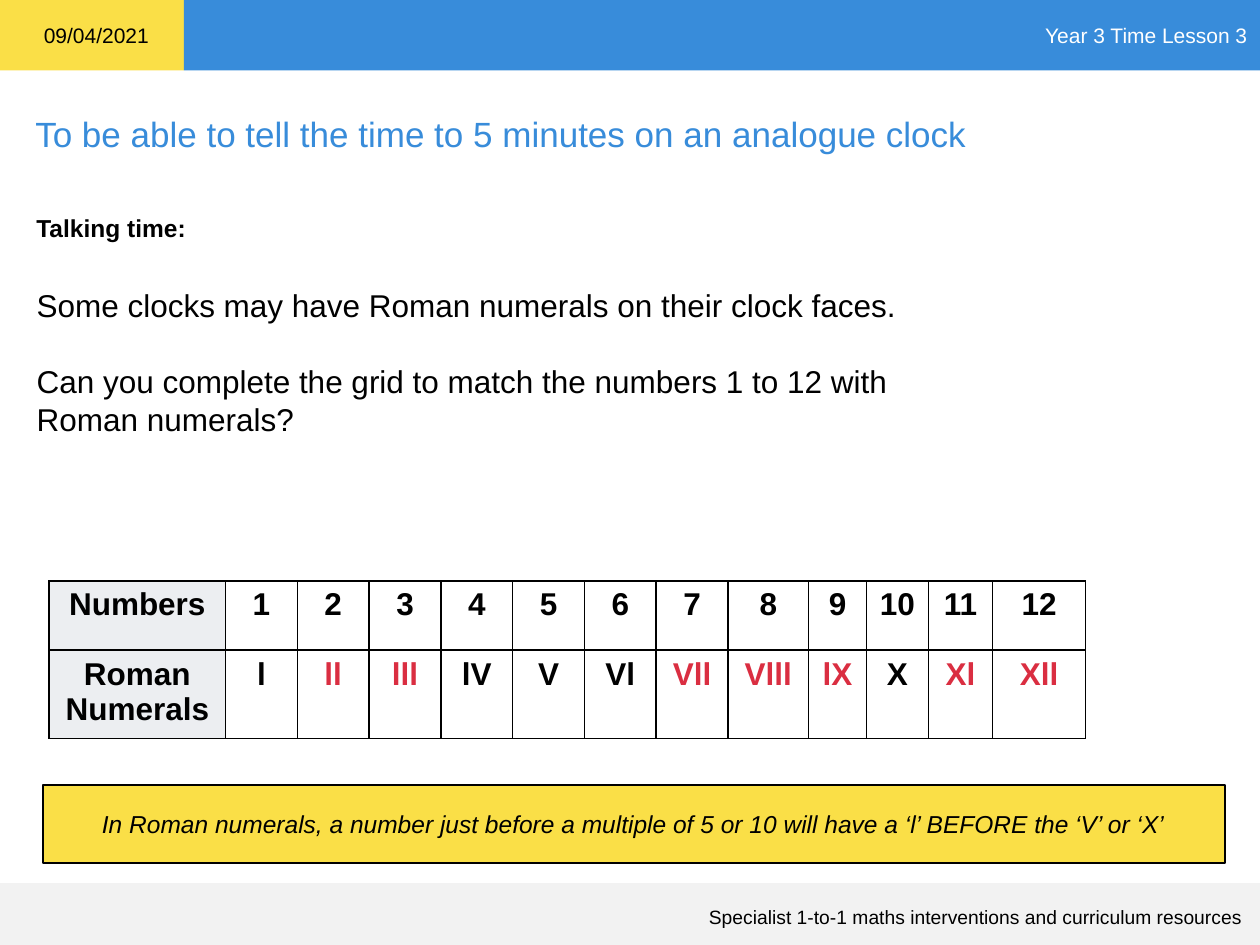
from lxml import etree
from pptx import Presentation
from pptx.dml.color import RGBColor
from pptx.enum import shapes, text
from pptx.oxml.ns import qn
from pptx.util import Inches, Pt

YELLOW = RGBColor(0xFA, 0xDF, 0x47)
BLUE = RGBColor(0x38, 0x8C, 0xDA)
PALE_GREY = RGBColor(0xF2, 0xF2, 0xF2)
LABEL_GREY = RGBColor(0xEC, 0xEE, 0xF1)
RED = RGBColor(0xDA, 0x2E, 0x41)
BLACK = RGBColor(0, 0, 0)
WHITE = RGBColor(0xFF, 0xFF, 0xFF)
LEFT, CENTER, RIGHT = text.PP_ALIGN.LEFT, text.PP_ALIGN.CENTER, text.PP_ALIGN.RIGHT
TOP, MIDDLE = text.MSO_ANCHOR.TOP, text.MSO_ANCHOR.MIDDLE

DATE = "09/04/2021"
LESSON = "Year 3 Time Lesson 3"
OBJECTIVE = "To be able to tell the time to 5 minutes on an analogue clock"
PROMPT = "Talking time:"
STATEMENTS = [  # text, points of space before
    ("Some clocks may have Roman numerals on their clock faces.", 0),
    ("Can you complete the grid to match the numbers 1 to 12 with", 22),
    ("Roman numerals?", 0),
]
NUMERALS = ["l", "ll", "lll", "lV", "V", "Vl", "Vll", "Vlll", "lX", "X", "Xl", "Xll"]
ANSWERS = {2, 3, 7, 8, 9, 11, 12}  # numbers whose numeral is shown in red
HINT = ("In Roman numerals, a number just before a multiple of 5 or 10 "
        "will have a ‘l’ BEFORE the ‘V’ or ‘X’")
FOOTER = "Specialist 1-to-1\u00a0maths\u00a0interventions and curriculum resources"

COLUMN_WIDTHS = [1.4] + [0.57] * 7 + [0.64, 0.46, 0.49, 0.51, 0.74]
ROW_HEIGHTS = [0.55, 0.7]


def write(frame, lines, size, color=BLACK, align=LEFT, anchor=TOP, bold=False, italic=False):
    """Fill a text frame with one paragraph per (text, space before) pair."""
    frame.word_wrap = True
    frame.auto_size = text.MSO_AUTO_SIZE.NONE
    frame.vertical_anchor = anchor
    write_paragraphs(frame, lines, size, color, align, bold, italic)


def write_paragraphs(frame, lines, size, color, align, bold=False, italic=False):
    for index, (line, space) in enumerate(lines):
        paragraph = frame.add_paragraph() if index else frame.paragraphs[0]
        paragraph.alignment = align
        paragraph.space_before = Pt(space)
        run = paragraph.add_run()
        run.text = line
        font = run.font
        font.name, font.size, font.bold, font.italic = "Arial", Pt(size), bold, italic
        font.color.rgb = color


def place(shape, left, top, width, height):
    shape.left, shape.top = Inches(left), Inches(top)
    shape.width, shape.height = Inches(width), Inches(height)


def add_bar(slide, box, fill, outlined=False):
    bar = slide.shapes.add_shape(shapes.MSO_SHAPE.RECTANGLE, *map(Inches, box))
    bar.shadow.inherit = False
    bar.fill.solid()
    bar.fill.fore_color.rgb = fill
    if outlined:
        bar.line.color.rgb = BLACK
        bar.line.width = Pt(1)
    else:
        bar.line.fill.background()
    return bar


def add_label(slide, box, line, size, **style):
    label = slide.shapes.add_textbox(*map(Inches, box))
    write(label.text_frame, [(line, 0)], size, **style)


def outline_cell(cell):
    properties = cell._tc.get_or_add_tcPr()
    for side in ("a:lnL", "a:lnR", "a:lnT", "a:lnB"):
        border = etree.SubElement(properties, qn(side), w=str(Pt(1)))
        fill = etree.SubElement(border, qn("a:solidFill"))
        etree.SubElement(fill, qn("a:srgbClr"), val=str(BLACK))


def add_numeral_grid(slide):
    numbers = range(1, len(NUMERALS) + 1)
    rows = [
        [(["Numbers"], BLACK)] + [([str(n)], BLACK) for n in numbers],
        [(["Roman", "Numerals"], BLACK)]
        + [([numeral], RED if n in ANSWERS else BLACK) for n, numeral in zip(numbers, NUMERALS)],
    ]
    grid = slide.shapes.add_table(
        len(rows), len(COLUMN_WIDTHS), Inches(0.39), Inches(4.61),
        Inches(sum(COLUMN_WIDTHS)), Inches(sum(ROW_HEIGHTS))).table
    for column, width in zip(grid.columns, COLUMN_WIDTHS):
        column.width = Inches(width)
    for row, height in zip(grid.rows, ROW_HEIGHTS):
        row.height = Inches(height)
    for r, row in enumerate(rows):
        for c, (lines, color) in enumerate(row):
            cell = grid.cell(r, c)
            cell.margin_left = cell.margin_right = Inches(0.07)
            outline_cell(cell)
            cell.fill.solid()
            cell.fill.fore_color.rgb = WHITE if c else LABEL_GREY
            write_paragraphs(cell.text_frame, [(line, 0) for line in lines],
                             18, color, CENTER, bold=True)


def main():
    deck = Presentation()
    deck.slide_width, deck.slide_height = Inches(10), Inches(7.5)
    slide = deck.slides.add_slide(deck.slide_layouts[1])

    add_bar(slide, (0, 0, 1.46, 0.56), YELLOW)
    header = add_bar(slide, (1.46, 0, 8.54, 0.56), BLUE)
    write(header.text_frame, [(LESSON, 0)], 12, WHITE, RIGHT, MIDDLE)
    add_bar(slide, (0, 7.01, 10, 0.49), PALE_GREY)
    add_label(slide, (0.42, 7.13, 9.54, 0.3), FOOTER, 11, align=RIGHT, anchor=MIDDLE)
    add_label(slide, (0.25, 0.13, 1.04, 0.3), DATE, 12)

    objective = slide.shapes.title
    place(objective, 0.18, 0.84, 9.35, 0.44)
    write(objective.text_frame, [(OBJECTIVE, 0)], 20, BLUE)

    add_label(slide, (0.19, 1.64, 1.5, 0.34), PROMPT, 14, bold=True)

    discussion = slide.placeholders[1]
    place(discussion, 0.19, 2.22, 9.8, 1.6)
    write(discussion.text_frame, STATEMENTS, 18)
    for paragraph in discussion.text_frame.paragraphs:
        properties = paragraph._p.get_or_add_pPr()
        properties.set("marL", "0")
        properties.set("indent", "0")
        etree.SubElement(properties, qn("a:buNone"))

    add_numeral_grid(slide)

    hint = add_bar(slide, (0.34, 6.23, 9.38, 0.62), YELLOW, outlined=True)
    write(hint.text_frame, [(HINT, 0)], 14, align=CENTER, anchor=MIDDLE, italic=True)

    deck.save("out.pptx")


if __name__ == "__main__":
    main()
